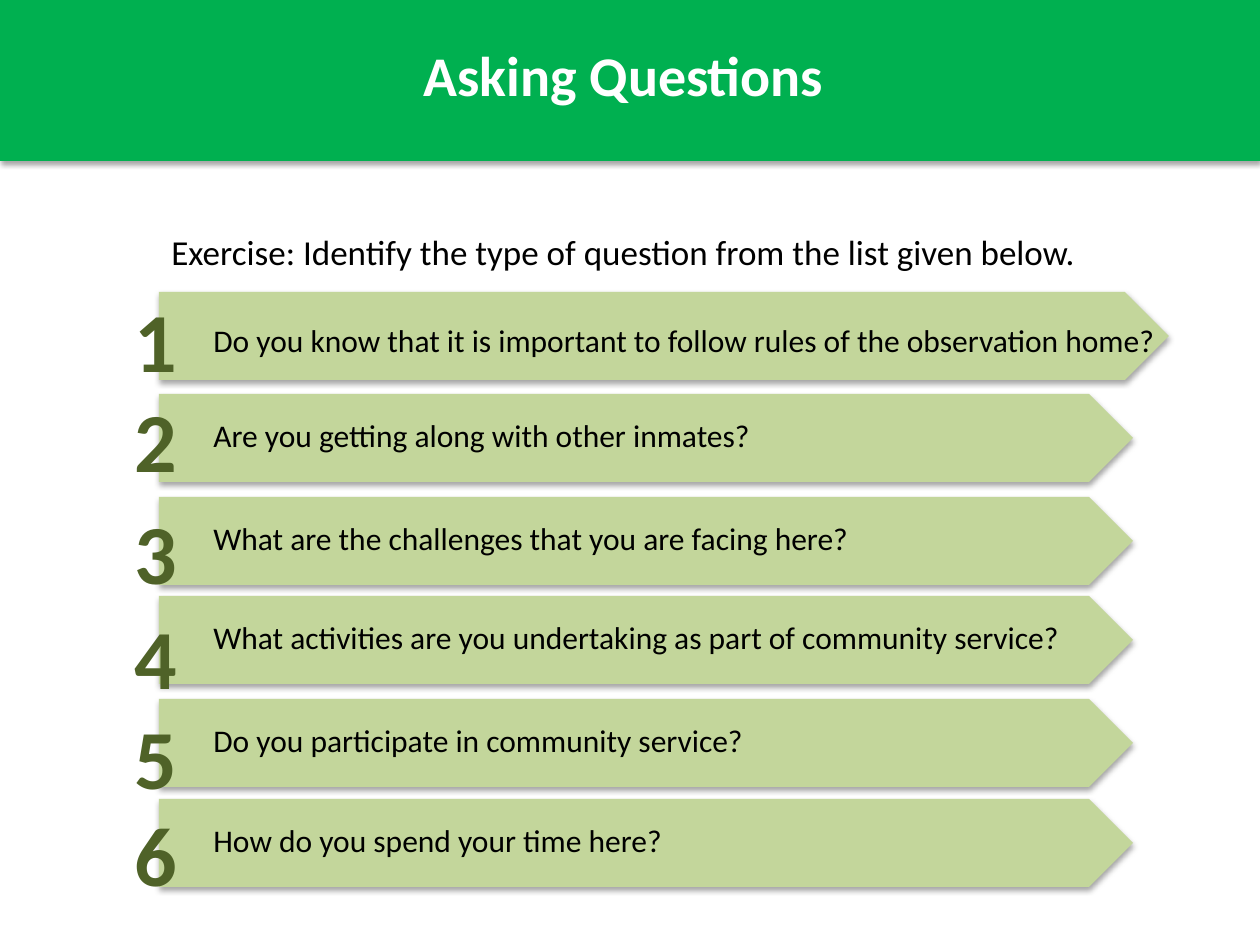
from lxml.etree import SubElement
from pptx import Presentation
from pptx.dml.color import RGBColor
from pptx.enum.shapes import MSO_SHAPE
from pptx.enum.text import MSO_AUTO_SIZE, PP_ALIGN
from pptx.oxml.ns import qn
from pptx.util import Pt

GREEN = RGBColor(0x00, 0xB0, 0x50)
LIME = RGBColor(0xC3, 0xD6, 0x9B)
OLIVE = RGBColor(0x4F, 0x62, 0x28)
WHITE = RGBColor(0xFF, 0xFF, 0xFF)
BLACK = RGBColor(0x00, 0x00, 0x00)

SCALE = 914400 / 126  # EMU in one px
LEFT, HIGH = 159, 88  # left edge and height of the bars

# Bar top, bar width, question top, question width, number top, question
ROWS = [
    (292, 1010, 315, 969, 282,
     "Do you know that it is important to follow rules of the observation home?"),
    (394, 974, 410, 898, 382, "Are you getting along with other inmates?"),
    (497, 974, 513, 898, 494, "What are the challenges that you are facing here?"),
    (596, 974, 612, 898, 599,
     "What activities are you undertaking as part of community service?"),
    (699, 974, 715, 898, 699, "Do you participate in community service?"),
    (799, 974, 815, 898, 796, "How do you spend your time here?"),
]


def px(*nums):
    return [round(n * SCALE) for n in nums]


def add_shade(shape):
    """Give the shape a soft shadow straight below it."""
    shape.shadow.inherit = False
    effects = shape._element.spPr.find(qn("a:effectLst"))
    outer = SubElement(effects, qn("a:outerShdw"), blurRad="40000", dist="23000",
                       dir="5400000", rotWithShape="0")
    color = SubElement(outer, qn("a:srgbClr"), val="000000")
    SubElement(color, qn("a:alpha"), val="35000")


def add_block(slide, kind, box, fill):
    shape = slide.shapes.add_shape(kind, *px(*box))
    shape.fill.solid()
    shape.fill.fore_color.rgb = fill
    shape.line.fill.background()
    add_shade(shape)


def add_text(slide, text, box, size=18, color=BLACK, bold=False, align=PP_ALIGN.LEFT):
    frame = slide.shapes.add_textbox(*px(*box)).text_frame
    frame.word_wrap = True
    frame.auto_size = MSO_AUTO_SIZE.SHAPE_TO_FIT_TEXT
    para = frame.paragraphs[0]
    para.alignment = align
    run = para.add_run()
    run.text = text
    run.font.name = "Calibri"
    run.font.size = Pt(size)
    run.font.bold = bold
    run.font.color.rgb = color


def main():
    deck = Presentation()
    deck.slide_width, deck.slide_height = px(1260, 945)
    slide = deck.slides.add_slide(deck.slide_layouts[6])

    # Title band
    add_block(slide, MSO_SHAPE.RECTANGLE, (0, 0, 1260, 161), GREEN)
    add_text(slide, "Asking Questions ", (0, 34, 1260, 81), size=32, color=WHITE,
             bold=True, align=PP_ALIGN.CENTER)

    # Task
    add_text(slide, "Exercise: Identify the type of question from the list given below.",
             (LEFT, 224, 1010, 55), size=20)

    # Numbered questions
    for num, (top, width, text_top, text_width, num_top, text) in enumerate(ROWS, 1):
        add_block(slide, MSO_SHAPE.PENTAGON, (LEFT, top, width, HIGH), LIME)
        add_text(slide, text, (201, text_top, text_width, 50))
        add_text(slide, str(num), (122, num_top, 38, 115), size=48, color=OLIVE, bold=True)

    deck.save("out.pptx")


if __name__ == "__main__":
    main()
